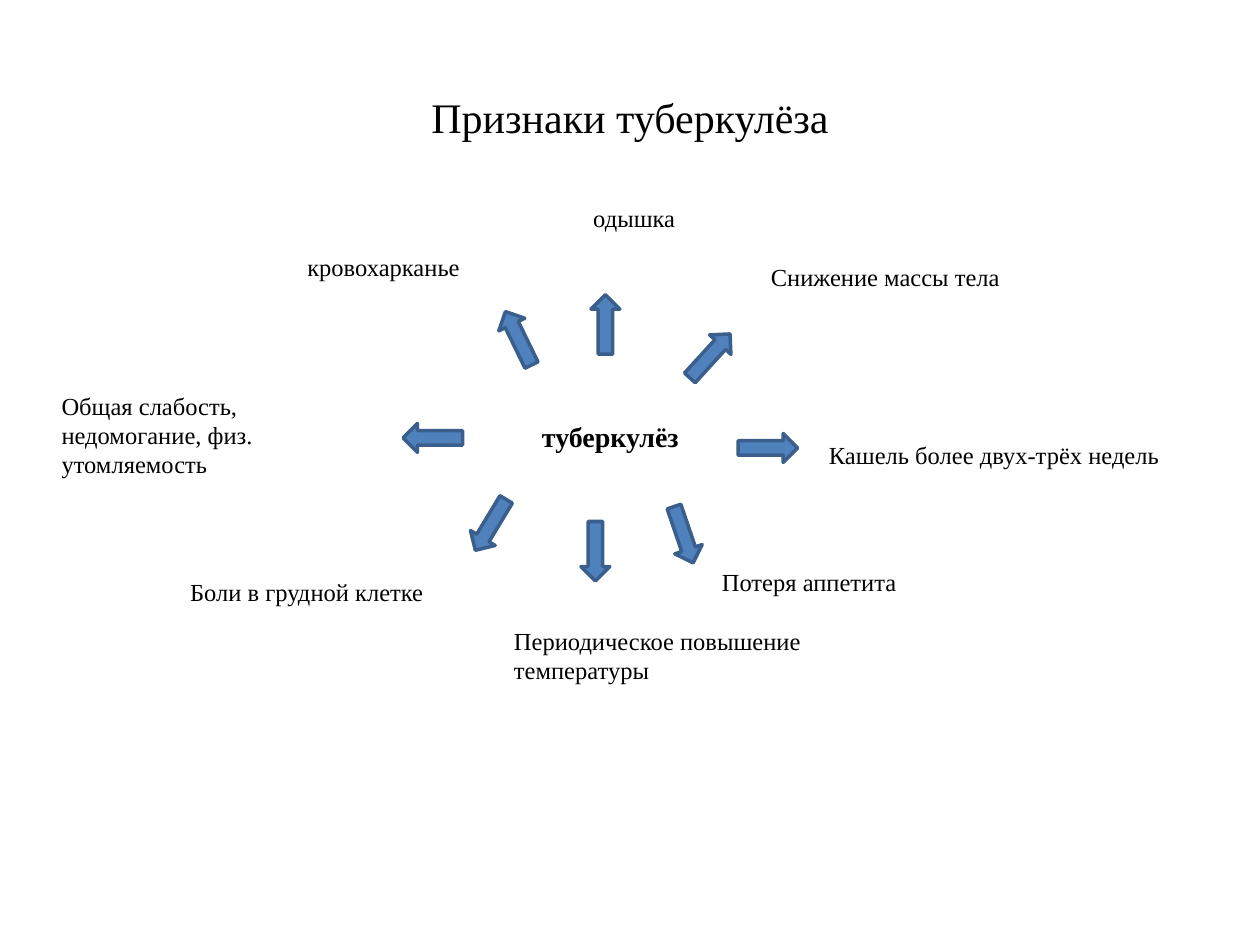
from pptx import Presentation
from pptx.dml.color import RGBColor
from pptx.enum.shapes import MSO_SHAPE
from pptx.enum.text import MSO_ANCHOR, PP_ALIGN
from pptx.util import Pt


def color(hex_value):
    return RGBColor.from_string(hex_value)


class SlideBuilder:
    font = "Times New Roman"
    text_color = "000000"
    arrow_fill = "4F81BD"
    arrow_line = "3A5F8C"
    arrow_width, arrow_height = 34, 16.5

    def __init__(self, slide):
        self.slide = slide

    def text(self, content, left, top, width, height, size=14, bold=False,
             align=PP_ALIGN.LEFT, anchor=MSO_ANCHOR.TOP):
        box = self.slide.shapes.add_textbox(Pt(left), Pt(top), Pt(width), Pt(height))
        frame = box.text_frame
        frame.word_wrap = True
        frame.vertical_anchor = anchor
        paragraph = frame.paragraphs[0]
        paragraph.alignment = align
        run = paragraph.add_run()
        run.text = content
        run.font.name = self.font
        run.font.size = Pt(size)
        run.font.bold = bold
        run.font.color.rgb = color(self.text_color)

    def arrow(self, center_x, center_y, angle):
        """Place a block arrow by its centre; angle is clockwise from the right."""
        shape = self.slide.shapes.add_shape(
            MSO_SHAPE.RIGHT_ARROW,
            Pt(center_x - self.arrow_width / 2), Pt(center_y - self.arrow_height / 2),
            Pt(self.arrow_width), Pt(self.arrow_height))
        shape.rotation = angle
        shape.shadow.inherit = False
        shape.fill.solid()
        shape.fill.fore_color.rgb = color(self.arrow_fill)
        shape.line.color.rgb = color(self.arrow_line)
        shape.line.width = Pt(2)


# Each symptom: text, its box (left, top, width, height), its arrow (x, y, angle)
SYMPTOMS = [
    ("Кашель более двух-трёх недель", (466.6, 247.7, 219.6, 24.5), (438.8, 256, 0)),
    ("Потеря аппетита", (405.4, 320.4, 213.8, 24.5), (390.6, 305.6, 71.2)),
    ("Периодическое повышение температуры", (286.6, 354.2, 253.4, 41), (340.2, 315, 90)),
    ("Боли в грудной клетке", (101.5, 326.2, 174.2, 24.5), (280.4, 299.9, 121.2)),
    ("Общая слабость, недомогание, физ. утомляемость",
     (28.1, 219.6, 191.5, 58.3), (247.3, 250.2, 180)),
    ("кровохарканье", (168.5, 140.4, 123.8, 24.5), (296.3, 193.3, 244)),
    ("одышка", (331.9, 112.3, 140.4, 24.5), (346, 185.4, 270)),
    ("Снижение массы тела", (433.4, 146.2, 225.4, 24.5), (405.7, 203.4, 312.4)),
]


def main():
    presentation = Presentation()
    presentation.slide_width, presentation.slide_height = Pt(720), Pt(540)
    builder = SlideBuilder(presentation.slides.add_slide(presentation.slide_layouts[6]))
    builder.text("Признаки туберкулёза", 36, 21.6, 648, 90, size=24,
                 align=PP_ALIGN.CENTER, anchor=MSO_ANCHOR.MIDDLE)
    builder.text("туберкулёз", 241.9, 236.2, 213.8, 26.6, size=16, bold=True,
                 align=PP_ALIGN.CENTER)
    for symptom, box, arrow in SYMPTOMS:
        builder.arrow(*arrow)
        builder.text(symptom, *box)
    presentation.save("out.pptx")


if __name__ == "__main__":
    main()
